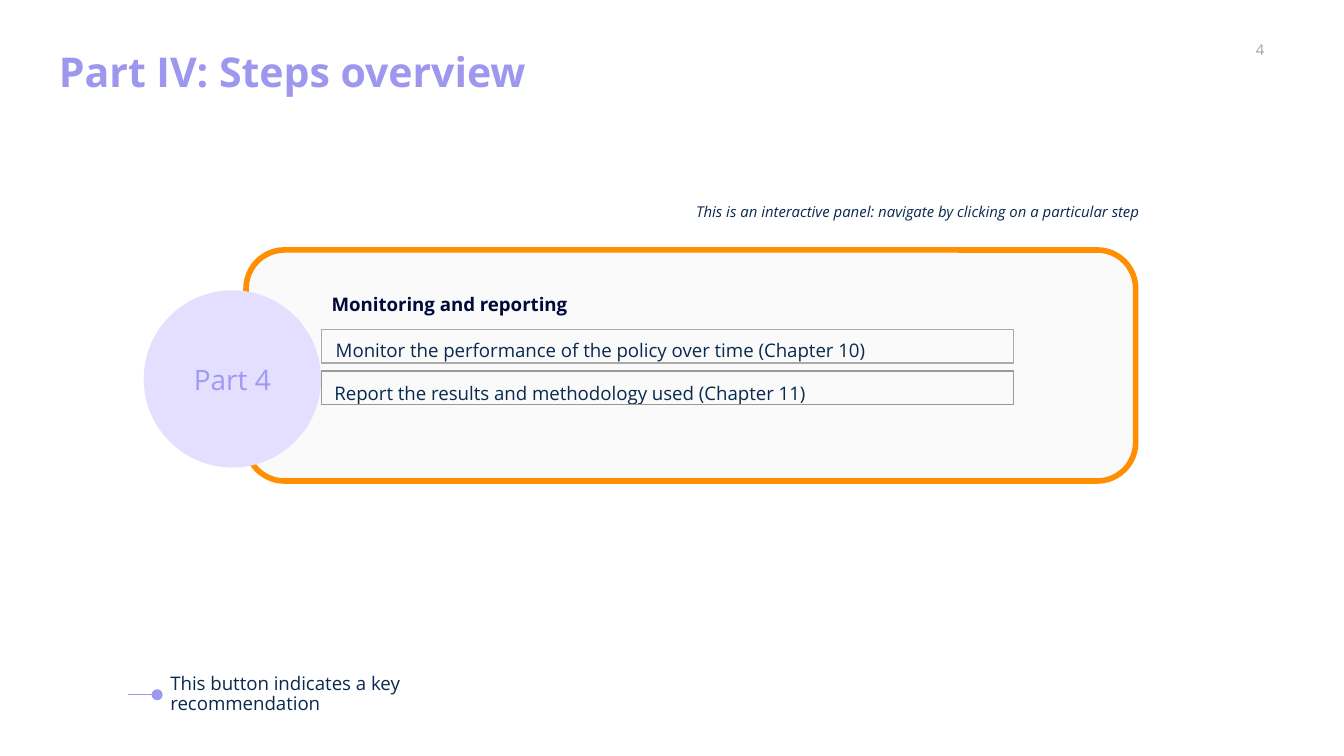
from dataclasses import dataclass
from typing import Optional

from lxml import etree
from pptx import Presentation
from pptx.dml.color import RGBColor
from pptx.enum import shapes as es, text as et
from pptx.oxml import ns
from pptx.util import Pt

FONT = "Open Sans"
NAVY = "09294E"
LILAC = "9D97F0"
TOP, MID = et.MSO_ANCHOR.TOP, et.MSO_ANCHOR.MIDDLE
LEFT, CENTER = et.PP_ALIGN.LEFT, et.PP_ALIGN.CENTER


@dataclass
class Box:
    x: float
    y: float
    w: float
    h: float

    def pts(self) -> tuple:
        return Pt(self.x), Pt(self.y), Pt(self.w), Pt(self.h)


@dataclass
class Label:
    text: str
    box: Box
    size: float = 10
    color: str = NAVY
    bold: bool = False
    ital: bool = False
    space: float = 1.0
    align: et.PP_ALIGN = LEFT
    anchor: et.MSO_ANCHOR = MID
    side: float = 7.2
    edge: float = 3.6


@dataclass
class Form:
    kind: es.MSO_SHAPE
    box: Box
    fill: Optional[str] = None
    line: Optional[str] = None
    width: float = 0.75


def rgb(code: str) -> RGBColor:
    return RGBColor.from_string(code)


def write(frame, label: Label) -> None:
    frame.word_wrap = True
    frame.vertical_anchor = label.anchor
    frame.margin_left = frame.margin_right = Pt(label.side)
    frame.margin_top = frame.margin_bottom = Pt(label.edge)
    para = frame.paragraphs[0]
    para.text = label.text
    para.alignment = label.align
    para.line_spacing = label.space
    font = para.font
    font.name, font.size = FONT, Pt(label.size)
    font.bold, font.italic = label.bold, label.ital
    font.color.rgb = rgb(label.color)


def put(slide, label: Label) -> None:
    write(slide.shapes.add_textbox(*label.box.pts()).text_frame, label)


def draw(slide, form: Form):
    shape = slide.shapes.add_shape(form.kind, *form.box.pts())
    shape.shadow.inherit = False
    if form.fill:
        shape.fill.solid()
        shape.fill.fore_color.rgb = rgb(form.fill)
    else:
        shape.fill.background()
    if form.line:
        shape.line.color.rgb = rgb(form.line)
        shape.line.width = Pt(form.width)
    else:
        shape.line.fill.background()
    return shape


def pin(slide, x: float, y: float, end: float) -> None:
    line = slide.shapes.add_connector(
        es.MSO_CONNECTOR.STRAIGHT, Pt(x), Pt(y), Pt(end), Pt(y))
    line.line.color.rgb = rgb(LILAC)
    line.line.width = Pt(0.75)
    stroke = line.line._get_or_add_ln()
    etree.SubElement(stroke, ns.qn("a:tailEnd"), type="oval")
    etree.SubElement(line._element.spPr, ns.qn("a:effectLst"))


def main() -> None:
    deck = Presentation()
    deck.slide_width, deck.slide_height = Pt(720), Pt(405)
    slide = deck.slides.add_slide(deck.slide_layouts[6])

    put(slide, Label("4", Box(646.6, 18.7, 56.9, 15.8), 8, "A5A5A5",
                     align=CENTER, side=0, edge=0))
    draw(slide, Form(es.MSO_SHAPE.ROUNDED_RECTANGLE,
                     Box(131.8, 133.9, 476.6, 123.8), "FAFAFA", "FF8E00", 3))
    put(slide, Label("Part IV: Steps overview", Box(24.5, 17.3, 671, 45.4),
                     22, LILAC, bold=True, space=0.9))
    put(slide, Label("Monitoring and reporting", Box(170.6, 148.3, 280, 45.4),
                     color="000A3A", bold=True, space=1.13, anchor=TOP, edge=7.2))

    disc = Box(77, 155.5, 95, 95)
    badge = draw(slide, Form(es.MSO_SHAPE.OVAL, disc, "E4DEFF"))
    write(badge.text_frame, Label("Part 4", disc, 15, "9E99F2",
                                  align=CENTER, side=0, edge=0))

    put(slide, Label("This button indicates a key recommendation",
                     Box(84.2, 357.1, 185, 29.5), space=0.9))
    put(slide, Label("This is an interactive panel: navigate by clicking on a particular step",
                     Box(365.8, 93.6, 265.7, 39.6), 8, ital=True))
    pin(slide, 68.4, 372.2, 84.2)

    steps = [
        ("Monitor the performance of the policy over time (Chapter 10)",
         172.8, 176.4, "AAAAAA"),
        ("Report the results and methodology used (Chapter 11)",
         172.1, 199.4, "999999"),
    ]
    for row, (words, x, y, edge) in enumerate(steps):
        put(slide, Label(words, Box(x, y, 599.8, 18), space=1.13, anchor=TOP))
        draw(slide, Form(es.MSO_SHAPE.RECTANGLE,
                         Box(172.1, 176.4 + 22.3 * row, 370.8, 18), line=edge))

    deck.save("out.pptx")


if __name__ == "__main__":
    main()
